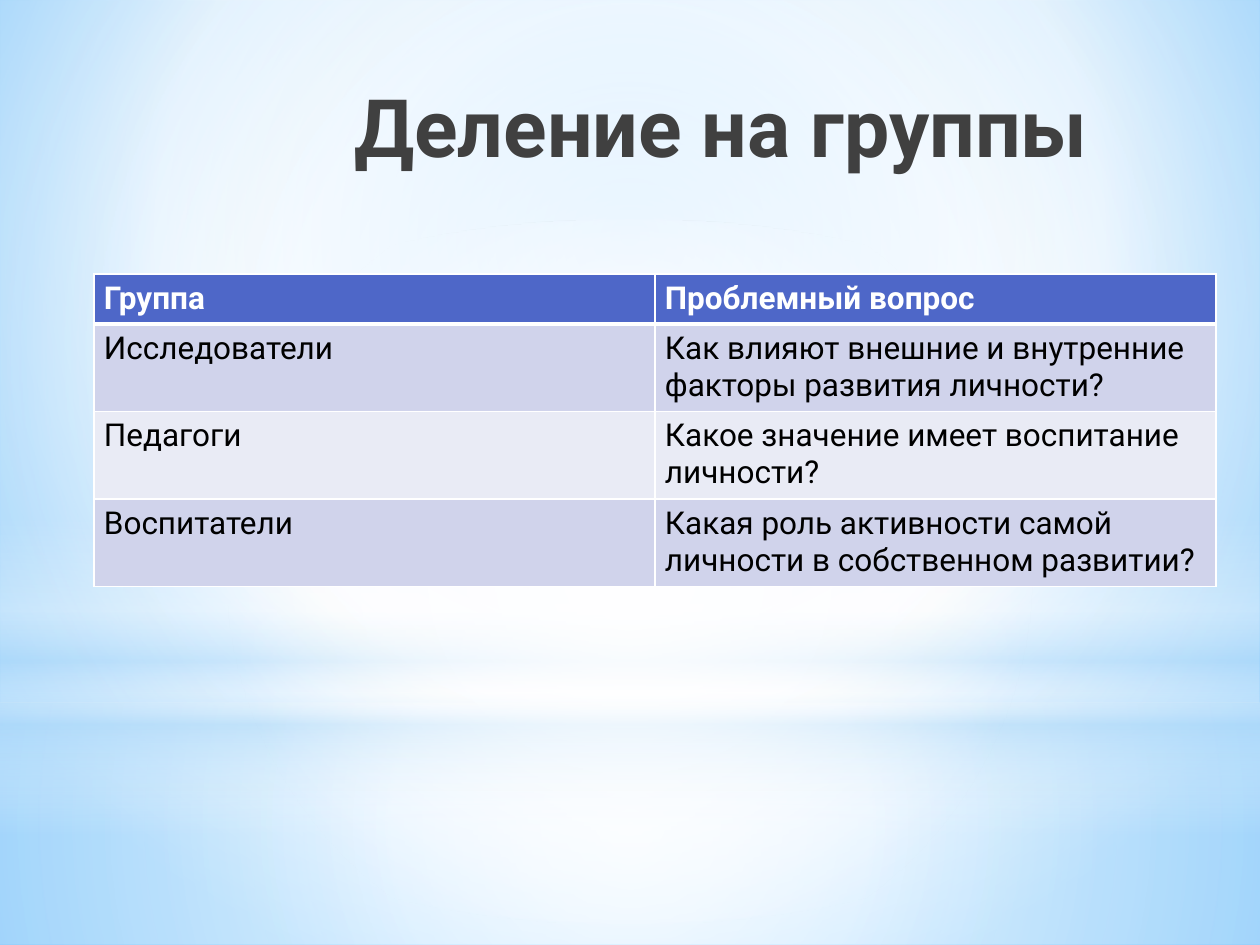
"""Builds the slide that divides a class into groups, each with its question."""
from dataclasses import dataclass

from lxml import etree
from pptx import Presentation
from pptx import util as u
from pptx.dml.color import RGBColor
from pptx.enum import shapes, text
from pptx.oxml import ns

PX = 914400 / 126
WIDTH, HEIGHT = 1260, 945


@dataclass(frozen=True)
class Theme:
    font: str = "Roboto"
    title_size: int = 46
    cell_size: int = 18
    title: str = "404040"
    ink: str = "000000"
    white: str = "FFFFFF"
    mist: str = "B4DCFA"
    sky: str = "9ED5FF"
    deep_sky: str = "5BB9FF"
    header: str = "4E67C8"
    bands: tuple = ("D0D3EB", "E9EBF5")


def px(length):
    return u.Emu(round(length * PX))


def add_child(parent, tag, **attributes):
    child = etree.SubElement(parent, ns.qn(tag))
    for name, value in attributes.items():
        child.set(name, str(value))
    return child


def fill_gradient(fill, owner, stops, center=None, angle=90):
    fill.gradient()
    gradient = owner.find(".//" + ns.qn("a:gradFill"))
    for child in list(gradient):
        gradient.remove(child)
    stop_list = add_child(gradient, "a:gsLst")
    for position, color, opacity in stops:
        stop = add_child(stop_list, "a:gs", pos=position * 1000)
        rgb = add_child(stop, "a:srgbClr", val=color)
        if opacity < 100:
            add_child(rgb, "a:alpha", val=opacity * 1000)
    if center:
        circle = add_child(gradient, "a:path", path="circle")
        sides = {side: value * 1000 for side, value in zip("ltrb", center)}
        add_child(circle, "a:fillToRect", **sides)
    else:
        add_child(gradient, "a:lin", ang=angle * 60000, scaled=0)


class SlideBuilder:
    def __init__(self, slide, theme):
        self.slide = slide
        self.theme = theme

    def background(self, stops, center):
        fill_gradient(self.slide.background.fill, self.slide.element, stops, center)

    def glow(self, kind, top, height, stops, center=None):
        shape = self.slide.shapes.add_shape(kind, 0, px(top), px(WIDTH), px(height))
        shape.shadow.inherit = False
        shape.line.fill.background()
        fill_gradient(shape.fill, shape.element, stops, center)

    def run(self, paragraph, words, size, color, bold):
        run = paragraph.add_run()
        run.text = words
        run.font.name = self.theme.font
        run.font.size = u.Pt(size)
        run.font.bold = bold
        run.font.color.rgb = RGBColor.from_string(color)

    def title(self, words, left, top, width, height):
        box = self.slide.shapes.add_textbox(px(left), px(top), px(width), px(height))
        frame = box.text_frame
        frame.word_wrap = True
        frame.margin_top = px(12)
        paragraph = frame.paragraphs[0]
        paragraph.alignment = text.PP_ALIGN.RIGHT
        self.run(paragraph, words, self.theme.title_size, self.theme.title, True)

    def borders(self, cell, bottom, top):
        properties = cell._tc.get_or_add_tcPr()
        for side, points in zip("LRTB", (1, 1, top, bottom)):
            line = add_child(properties, f"a:ln{side}", w=u.Pt(points))
            add_child(add_child(line, "a:solidFill"), "a:srgbClr", val=self.theme.white)

    def table(self, rows, left, top, column_width, row_heights):
        columns = len(rows[0])
        table = self.slide.shapes.add_table(
            len(rows), columns, px(left), px(top),
            px(column_width * columns), px(sum(row_heights))).table
        for column in table.columns:
            column.width = px(column_width)
        for index, (words, height) in enumerate(zip(rows, row_heights)):
            table.rows[index].height = px(height)
            for cell, label in zip(table.rows[index].cells, words):
                self.cell(cell, label, index)

    def cell(self, cell, label, row):
        theme = self.theme
        is_header = row == 0
        cell.margin_left = cell.margin_right = px(10)
        cell.margin_top = cell.margin_bottom = px(6)
        self.borders(cell, bottom=3 if is_header else 1, top=3 if row == 1 else 1)
        cell.fill.solid()
        color = theme.header if is_header else theme.bands[(row - 1) % 2]
        cell.fill.fore_color.rgb = RGBColor.from_string(color)
        ink = theme.white if is_header else theme.ink
        self.run(cell.text_frame.paragraphs[0], label, theme.cell_size, ink, is_header)


def main():
    presentation = Presentation()
    presentation.slide_width, presentation.slide_height = px(WIDTH), px(HEIGHT)
    theme = Theme()
    builder = SlideBuilder(presentation.slides.add_slide(presentation.slide_layouts[6]), theme)
    white, mist = theme.white, theme.mist
    rectangle, ellipse = shapes.MSO_SHAPE.RECTANGLE, shapes.MSO_SHAPE.OVAL
    middle = (50, 50, 50, 50)
    horizon = 703

    builder.background(
        [(0, theme.sky, 100), (60, white, 100), (100, theme.deep_sky, 100)], (20, 10, 20, 60))
    builder.glow(rectangle, horizon, HEIGHT - horizon,
                 [(0, white, 91), (37, white, 76), (100, mist, 79)], middle)
    builder.glow(rectangle, 0, horizon,
                 [(0, white, 89), (48, white, 62), (100, mist, 79)], middle)
    builder.glow(rectangle, 519, 315,
                 [(0, white, 0), (29, white, 30), (45, mist, 40),
                  (55, white, 26), (65, mist, 60), (100, white, 0)])
    builder.glow(ellipse, 220, horizon, [(0, white, 100), (56, white, 0)], middle)

    builder.title("Деление на группы", 203, 65, 897, 158)
    builder.table([
        ("Группа", "Проблемный вопрос"),
        ("Исследователи", "Как влияют внешние и внутренние факторы развития личности?"),
        ("Педагоги", "Какое значение имеет воспитание личности?"),
        ("Воспитатели", "Какая роль активности самой личности в собственном развитии?"),
    ], 94, 274, 561, [50, 87, 87, 87])
    presentation.save("out.pptx")


if __name__ == "__main__":
    main()
